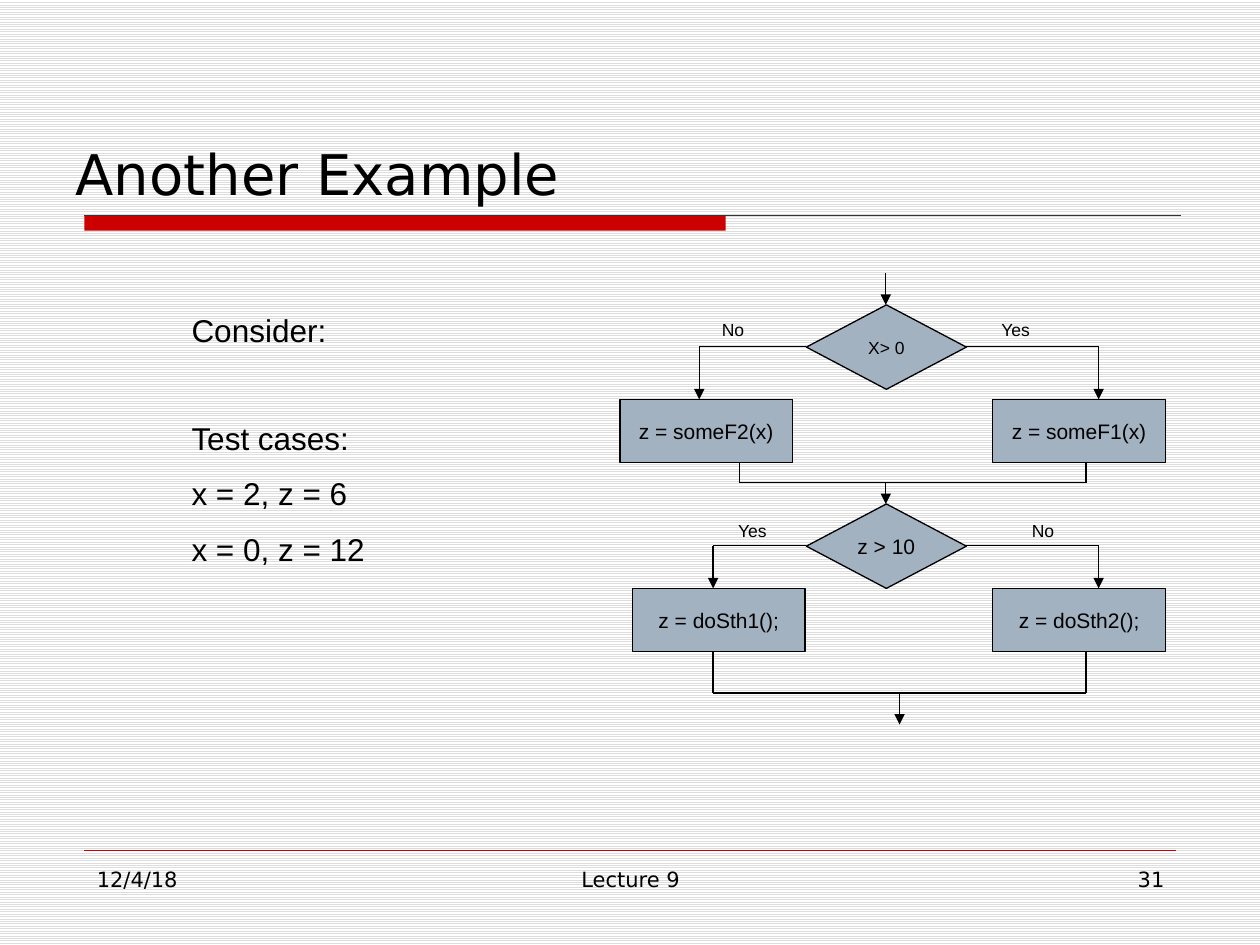
"""Build the flowchart slide "Another Example" and save it as out.pptx."""
from dataclasses import dataclass

from lxml import etree
from pptx import Presentation
from pptx.dml.color import RGBColor
from pptx.enum.dml import MSO_PATTERN
from pptx.enum.shapes import MSO_CONNECTOR, MSO_SHAPE
from pptx.enum.text import MSO_ANCHOR, MSO_AUTO_SIZE, PP_ALIGN
from pptx.oxml.ns import qn
from pptx.util import Inches, Pt

LEFT, CENTER, RIGHT = PP_ALIGN.LEFT, PP_ALIGN.CENTER, PP_ALIGN.RIGHT
TOP, MIDDLE = MSO_ANCHOR.TOP, MSO_ANCHOR.MIDDLE
NO_FIT = MSO_AUTO_SIZE.NONE
DECISION, PROCESS = MSO_SHAPE.FLOWCHART_DECISION, MSO_SHAPE.FLOWCHART_PROCESS
RECTANGLE, STRAIGHT = MSO_SHAPE.RECTANGLE, MSO_CONNECTOR.STRAIGHT
STRIPES = MSO_PATTERN.LIGHT_HORIZONTAL

COLORS = {"stripe": "DDDDDD", "paper": "FFFFFF", "accent": "CC0000",
          "rule": "333333", "node": "A3B2C1", "ink": "000000"}
SANS, BODY = "DejaVu Sans", "Arial"
NODE_SIZES = {DECISION: (1.27, 0.67), PROCESS: (1.37, 0.5)}


@dataclass
class Node:
    kind: int
    left: float
    top: float
    text: str
    size: int = 12


@dataclass
class Label:
    left: float
    top: float
    width: float
    height: float
    text: str
    size: int = 10
    font: str = BODY
    align: int = LEFT
    wrap: bool = False


@dataclass
class Route:
    points: list[tuple[float, float]]
    arrow: bool = False


NODES = [
    Node(DECISION, 6.4, 2.42, "X> 0", 10),
    Node(PROCESS, 4.92, 3.17, "z = someF2(x)"),
    Node(PROCESS, 7.88, 3.17, "z = someF1(x)"),
    Node(DECISION, 6.4, 4, "z > 10"),
    Node(PROCESS, 5.02, 4.67, "z = doSth1();"),
    Node(PROCESS, 7.88, 4.67, "z = doSth2();"),
]
ROUTES = [
    Route([(7.03, 2.17), (7.03, 2.42)], True),
    Route([(6.4, 2.75), (5.55, 2.75), (5.55, 3.17)], True),
    Route([(7.66, 2.75), (8.72, 2.75), (8.72, 3.17)], True),
    Route([(5.87, 3.67), (5.87, 3.83), (8.62, 3.83), (8.62, 3.67)]),
    Route([(7.03, 3.83), (7.03, 4)], True),
    Route([(6.4, 4.33), (5.66, 4.33), (5.66, 4.67)], True),
    Route([(7.66, 4.33), (8.72, 4.33), (8.72, 4.67)], True),
    Route([(5.66, 5.17), (5.66, 5.5), (8.62, 5.5), (8.62, 5.17)]),
    Route([(7.14, 5.5), (7.14, 5.75)], True),
]
LABELS = [
    Label(7.85, 2.48, 0.56, 0.27, "Yes"),
    Label(5.63, 2.48, 0.48, 0.27, "No"),
    Label(5.76, 4.08, 0.56, 0.27, "Yes"),
    Label(8.09, 4.08, 0.48, 0.27, "No"),
    Label(0.67, 6.83, 2.17, 0.52, "12/4/18", 12, SANS, LEFT, True),
    Label(3.42, 6.83, 3.17, 0.52, "Lecture 9", 12, SANS, CENTER, True),
    Label(7.17, 6.83, 2.17, 0.52, "31", 12, SANS, RIGHT, True),
]
BODY_LINES = [("Consider:", 0), ("Test cases:", 40),
              ("x = 2, z = 6", 10), ("x = 0, z = 12", 10)]


def color(name: str) -> RGBColor:
    return RGBColor.from_string(COLORS[name])


def style(para, size: int, font: str, align: int = LEFT) -> None:
    para.alignment = align
    para.font.size, para.font.name = Pt(size), font
    para.font.color.rgb = color("ink")


def place(shape, left: float, top: float, width: float, height: float) -> None:
    shape.left, shape.top = Inches(left), Inches(top)
    shape.width, shape.height = Inches(width), Inches(height)


def add_box(page, kind: int, left: float, top: float, width: float, height: float, fill: str):
    box = page.shapes.add_shape(kind, Inches(left), Inches(top), Inches(width), Inches(height))
    box.shadow.inherit = False
    box.fill.solid()
    box.fill.fore_color.rgb = color(fill)
    return box


def add_line(page, start, end, ink: str = "ink", weight: float = 0.75, arrow: bool = False) -> None:
    line = page.shapes.add_connector(STRAIGHT, *map(Inches, start + end))
    line.line.color.rgb, line.line.width = color(ink), Pt(weight)
    if arrow:
        etree.SubElement(line.line._get_or_add_ln(), qn("a:tailEnd"), type="triangle")
    etree.SubElement(line._element.spPr, qn("a:effectLst"))


def add_route(page, route: Route) -> None:
    last = len(route.points) - 2
    for index, (start, end) in enumerate(zip(route.points, route.points[1:])):
        add_line(page, start, end, arrow=route.arrow and index == last)


def add_node(page, node: Node) -> None:
    box = add_box(page, node.kind, node.left, node.top, *NODE_SIZES[node.kind], "node")
    box.line.color.rgb, box.line.width = color("ink"), Pt(0.75)
    frame = box.text_frame
    frame.text, frame.word_wrap, frame.vertical_anchor = node.text, False, MIDDLE
    style(frame.paragraphs[0], node.size, BODY, CENTER)


def add_label(page, label: Label) -> None:
    box = page.shapes.add_textbox(Inches(label.left), Inches(label.top),
                                  Inches(label.width), Inches(label.height))
    box.text_frame.text, box.text_frame.word_wrap = label.text, label.wrap
    style(box.text_frame.paragraphs[0], label.size, label.font, label.align)


def fill_title(title) -> None:
    place(title, 0.5, 1.06, 4.07, 0.64)
    frame = title.text_frame
    frame.text, frame.word_wrap = "Another Example", False
    frame.auto_size, frame.vertical_anchor = NO_FIT, TOP
    style(frame.paragraphs[0], 32, SANS)


def fill_body(body) -> None:
    place(body, 0.92, 2.42, 3.75, 2.52)
    frame = body.text_frame
    frame.text = "\n".join(text for text, _ in BODY_LINES)
    frame.auto_size, frame.vertical_anchor = NO_FIT, TOP
    for para, (_, gap) in zip(frame.paragraphs, BODY_LINES):
        style(para, 18, BODY)
        para.space_before = Pt(gap)
        properties = para._p.get_or_add_pPr()
        properties.set("marL", str(Inches(0.5)))
        properties.set("indent", "0")
        properties.insert_element_before(
            etree.Element(qn("a:buNone")), "a:tabLst", "a:defRPr", "a:extLst")


def main() -> None:
    deck = Presentation()
    deck.slide_width, deck.slide_height = Inches(10), Inches(7.5)
    page = deck.slides.add_slide(deck.slide_layouts[1])
    backdrop = page.background.fill
    backdrop.patterned()
    backdrop.pattern = STRIPES
    backdrop.fore_color.rgb, backdrop.back_color.rgb = color("stripe"), color("paper")

    add_box(page, RECTANGLE, 0.67, 1.71, 5.09, 0.12, "accent").line.fill.background()
    add_line(page, (0.67, 1.71), (9.37, 1.71), "rule")
    add_line(page, (0.67, 6.75), (9.33, 6.75), "accent", 0.25)
    fill_title(page.shapes.title)
    for node in NODES:
        add_node(page, node)
    for route in ROUTES:
        add_route(page, route)
    for label in LABELS:
        add_label(page, label)
    fill_body(page.placeholders[1])
    deck.save("out.pptx")


if __name__ == "__main__":
    main()
